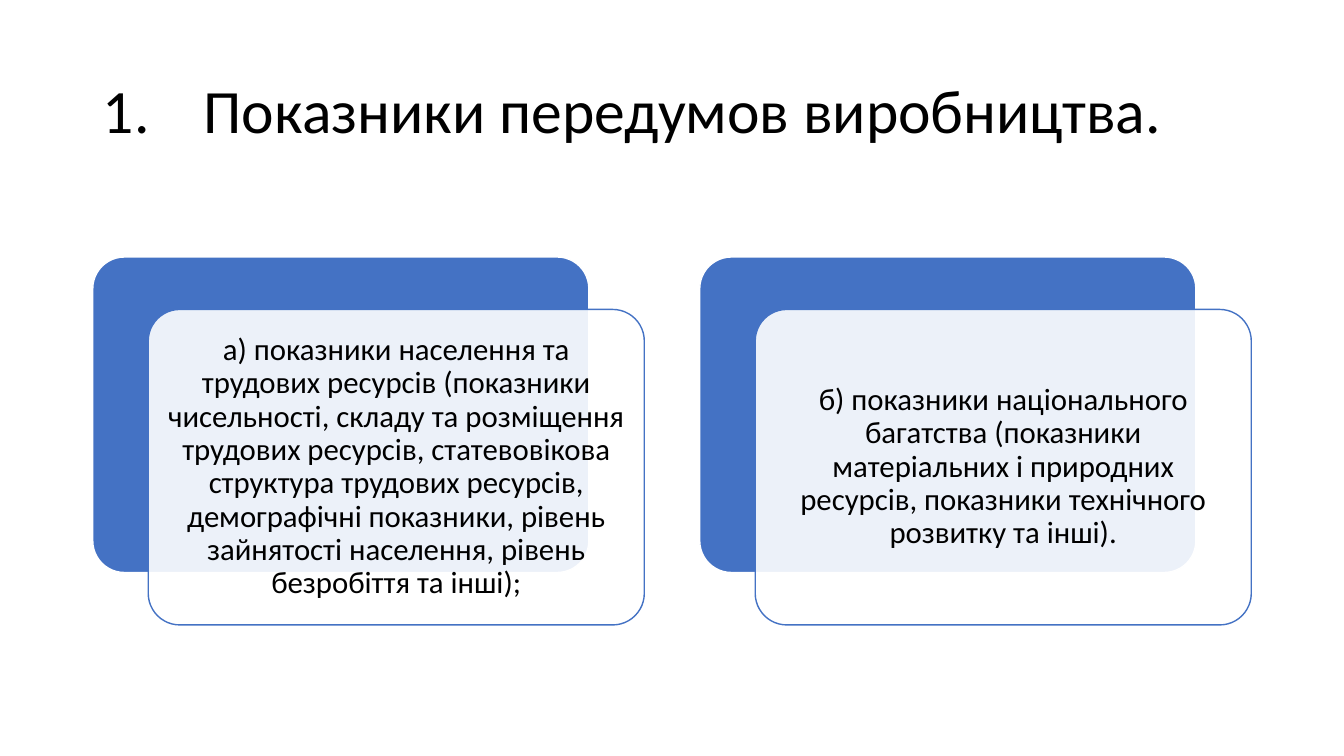
import dataclasses

import pptx
import pptx.dml.color
import pptx.enum.shapes
import pptx.enum.text
import pptx.oxml.ns
import pptx.util
from lxml import etree

Inches = pptx.util.Inches
Align = pptx.enum.text.PP_ALIGN
qn = pptx.oxml.ns.qn


@dataclasses.dataclass(frozen=True)
class Theme:
    font: str = "Calibri"
    title_size: int = 44
    body_size: int = 22
    text: str = "000000"
    accent: str = "4472C4"
    white: str = "FFFFFF"


THEME = Theme()

TITLE = "1.\tПоказники передумов виробництва."
CARDS = [
    "а) показники населення та трудових ресурсів (показники чисельності, "
    "складу та розміщення трудових ресурсів, статевовікова структура трудових "
    "ресурсів, демографічні показники, рівень зайнятості населення, рівень "
    "безробіття та інші);",
    "б) показники національного багатства (показники матеріальних і природних "
    "ресурсів, показники технічного розвитку та інші).",
]


def rgb(color):
    return pptx.dml.color.RGBColor.from_string(color)


def write_text(tf, text, *, size, align, inset=(0.1, 0.05), tab=None):
    """Fill a text frame with one paragraph; inset is (sides, top and bottom)."""
    tf.word_wrap = True
    tf.auto_size = pptx.enum.text.MSO_AUTO_SIZE.NONE
    tf.vertical_anchor = pptx.enum.text.MSO_ANCHOR.MIDDLE
    tf.margin_left = tf.margin_right = Inches(inset[0])
    tf.margin_top = tf.margin_bottom = Inches(inset[1])
    p = tf.paragraphs[0]
    p.alignment = align
    p.line_spacing = 0.9
    if tab is not None:
        tabs = etree.SubElement(p._p.get_or_add_pPr(), qn("a:tabLst"))
        etree.SubElement(tabs, qn("a:tab"), pos=str(Inches(tab)), algn="l")
    r = p.add_run()
    r.text = text
    r.font.name = THEME.font
    r.font.size = pptx.util.Pt(size)
    r.font.color.rgb = rgb(THEME.text)


def add_panel(shapes, left, top, width, height, *, fill, line, opacity=100):
    sp = shapes.add_shape(
        pptx.enum.shapes.MSO_SHAPE.ROUNDED_RECTANGLE,
        Inches(left), Inches(top), Inches(width), Inches(height))
    sp.adjustments[0] = 0.1
    sp.shadow.inherit = False
    sp.fill.solid()
    sp.fill.fore_color.rgb = rgb(fill)
    if opacity < 100:
        color = sp.fill._xPr.find(".//" + qn("a:srgbClr"))
        etree.SubElement(color, qn("a:alpha"), val=str(opacity * 1000))
    sp.line.color.rgb = rgb(line)
    sp.line.width = pptx.util.Pt(1)
    return sp


def add_title(s, left, top, width, height):
    title = s.shapes.title
    title.left, title.top = Inches(left), Inches(top)
    title.width, title.height = Inches(width), Inches(height)
    write_text(title.text_frame, TITLE, size=THEME.title_size, align=Align.LEFT,
               tab=1)


def add_card(shapes, text, left, top, width, height):
    """Place a solid panel and, shifted down and right, a translucent one with text."""
    shift_x, shift_y = 0.55, 0.52
    panel = width - shift_x, height - shift_y
    add_panel(shapes, left, top, *panel, fill=THEME.accent, line=THEME.white)
    front = add_panel(shapes, left + shift_x, top + shift_y, *panel,
                      fill=THEME.white, line=THEME.accent, opacity=90)
    write_text(front.text_frame, text, size=THEME.body_size, align=Align.CENTER,
               inset=(0.09, 0.09))


def add_cards(s, left, top, width, height, gap=0.55):
    card_width = (width - gap * (len(CARDS) - 1)) / len(CARDS)
    group = s.shapes.add_group_shape()
    for i, text in enumerate(CARDS):
        add_card(group.shapes, text, left + i * (card_width + gap), top,
                 card_width, height)


def main():
    prs = pptx.Presentation()
    prs.slide_width, prs.slide_height = Inches(13.33), Inches(7.5)
    s = prs.slides.add_slide(prs.slide_layouts[5])
    add_title(s, 0.92, 0.4, 11.5, 1.45)
    add_cards(s, 0.92, 2.55, 11.49, 3.65)
    prs.save("out.pptx")


if __name__ == "__main__":
    main()
